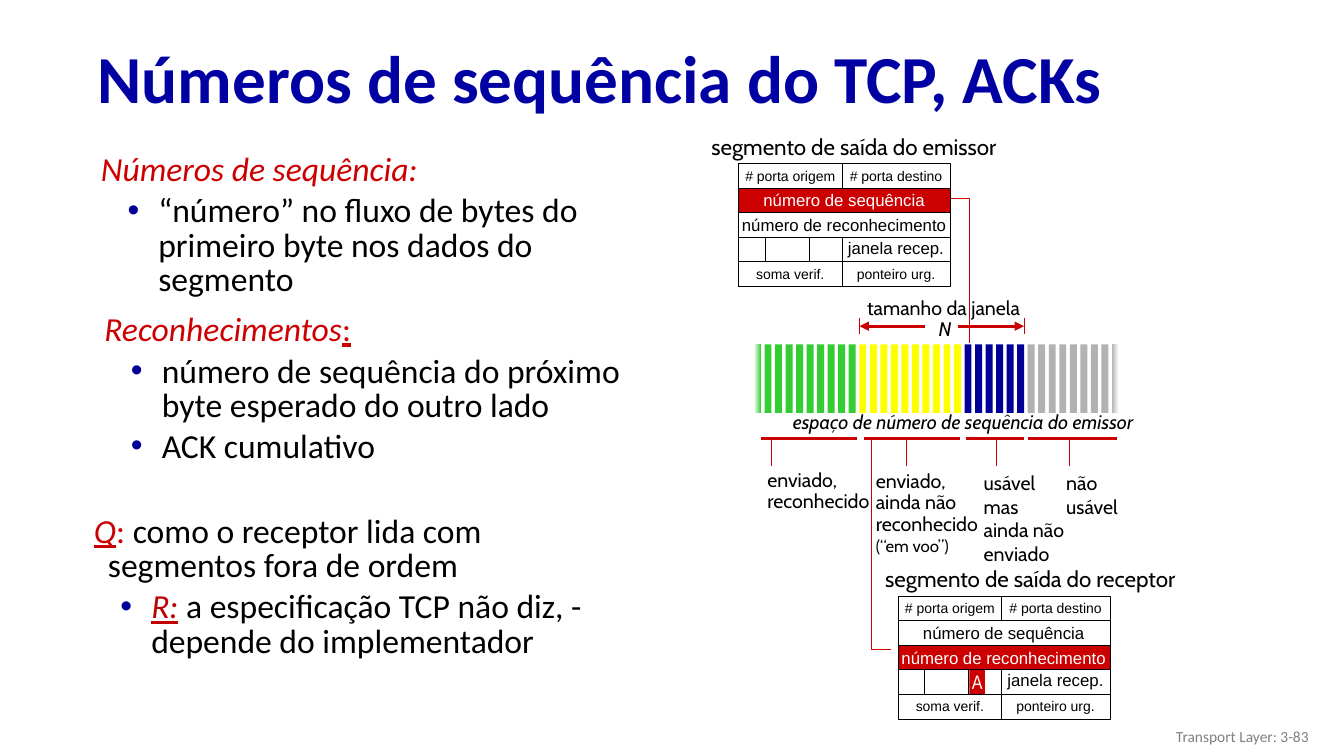
"""Build the slide on TCP sequence numbers and ACKs."""
from lxml.etree import SubElement as Sub
from pptx import Presentation
from pptx.dml.color import RGBColor as RGB
from pptx.enum.shapes import MSO_CONNECTOR as LINK, MSO_SHAPE as FORM
from pptx.enum.text import MSO_ANCHOR as ANCHOR, PP_ALIGN as ALIGN
from pptx.oxml.ns import qn
from pptx.util import Pt

BLACK = RGB(0, 0, 0)
WHITE = RGB(255, 255, 255)
RED = RGB(0xCC, 0, 0)
DARK = RGB(0xC0, 0, 0)
NAVY = RGB(0, 0, 0xA3)
BLUE = RGB(0, 0, 0x99)
GREEN = RGB(0x33, 0xCC, 0x33)
GOLD = RGB(0xFF, 0xFF, 0)
GRAY = RGB(0xB2, 0xB2, 0xB2)
DIM = RGB(0x80, 0x80, 0x80)
LEFT, MID, RIGHT = ALIGN.LEFT, ALIGN.CENTER, ALIGN.RIGHT

deck = Presentation()
deck.slide_width, deck.slide_height = Pt(960), Pt(540)
slide = deck.slides.add_slide(deck.slide_layouts[6])
shapes = slide.shapes


def frame(x, y, w, h, anchor=ANCHOR.TOP):
    area = shapes.add_textbox(Pt(x), Pt(y), Pt(w), Pt(h)).text_frame
    area.word_wrap = True
    area.vertical_anchor = anchor
    return area


def write(para, text, size=14, face="Cabin", hue=BLACK, bold=False, slant=False, under=False):
    run = para.add_run()
    run.text = text
    font = run.font
    font.size, font.name, font.color.rgb = Pt(size), face, hue
    font.bold, font.italic, font.underline = bold, slant, under


rects = []
lines = []
labels = []
bends = [[(679, 141.8), (692.6, 141.8), (692.6, 245)],
         [(636.5, 463.7), (622.8, 463.7), (622.8, 314)]]

WIDE, TALL, ROW, HALF = 151.5, 88, 17.5, 74
for left, top, mark in [(527.5, 117, 1), (641.5, 426, 2)]:
    rects.append((left, top + mark * ROW, WIDE, ROW, RED, None))
    rects.append((left, top, WIDE, TALL, None, BLACK))
    for row in range(1, 5):
        lines.append((left, top + row * ROW, left + WIDE, top + row * ROW, BLACK, 0.75, False))
    for x, start, end in [(HALF, 0, 1), (HALF, 3, TALL / ROW), (19, 3, 4), (50.5, 3, 4)]:
        lines.append((left + x, top + start * ROW, left + x, top + end * ROW, BLACK, 0.75, False))
    for x, y, size, text in [(37, -1, 10, "# porta origem"), (112.5, -1, 10, "# porta destino"),
                             (75.5, 15, 12, "número de sequência"),
                             (75.5, 33, 12, "número de reconhecimento"),
                             (112.5, 49, 12, "janela recep."),
                             (37, 69, 10, "soma verif."), (112.5, 69, 10, "ponteiro urg.")]:
        hue = WHITE if y == (15, 33)[mark - 1] else BLACK
        labels.append((left + x - 90, top + y, 180, MID, 1, text,
                       dict(size=size, face="Arial", hue=hue)))
rects.append((692.5, 478.5, 11, 17.5, RED, None))

hues = [GREEN] * 10 + [GOLD] * 10 + [BLUE] * 6 + [GRAY] * 9
for i, hue in enumerate(hues):
    fill = hue
    if i == 0:
        fill = (WHITE, hue)
    elif i == len(hues) - 1:
        fill = (hue, WHITE)
    rects.append((538.6 + 7.52 * i, 246, 5, 49, fill, None))

for start, end, tick in [(543.5, 612, 551), (617, 685.5, 647.5), (690, 731.5, 712), (734.5, 798, 764)]:
    lines.append((start, 313, end, 313, RED, 2.25, False))
    lines.append((tick, 314.5, tick, 333, RED, 0.75, False))
for start, end in [(684.5, 731.5), (660.5, 614)]:
    lines.append((start, 233, end, 233, RED, 2.25, True))
    lines.append((end, 227.5, end, 238.5, RED, 0.75, False))

labels += [
    (490, 91.5, 240, MID, 1, "segmento de saída do emissor", dict(size=16)),
    (616, 400, 240, MID, 1, "segmento de saída do receptor", dict(size=16)),
    (590, 209.5, 168, MID, 0.9, "tamanho da janela", {}),
    (640, 225, 70, MID, 0.9, "N", dict(slant=True)),
    (538, 289.5, 300, MID, 1, "espaço de número de sequência do emissor", dict(slant=True)),
    (541, 332.5, 100, LEFT, 0.9, "enviado,\nreconhecido", {}),
    (618.5, 333.5, 100, LEFT, 0.9, "enviado,\nainda não\nreconhecido", {}),
    (618.5, 381, 90, LEFT, 0.9, "(“em voo”)", dict(size=12)),
    (695.5, 333, 85, LEFT, 1, "usável\nmas\nainda não\nenviado", {}),
    (754.5, 333, 65, LEFT, 1, "não\nusável", {}),
    (673, 475, 50, MID, 1, "A", dict(face="Arial Narrow", hue=WHITE)),
    (726, 516, 216, RIGHT, 1, "Transport Layer: 3-83", dict(size=11, face="Calibri", hue=DIM)),
]

for x, y, w, h, fill, edge in rects:
    rect = shapes.add_shape(FORM.RECTANGLE, Pt(x), Pt(y), Pt(w), Pt(h))
    rect.shadow.inherit = False
    if fill is None:
        rect.fill.background()
    elif fill in hues or fill == RED:
        rect.fill.solid()
        rect.fill.fore_color.rgb = fill
    else:
        rect.fill.gradient()
        rect.fill.gradient_angle = 0
        for stop, hue in zip(rect.fill.gradient_stops, fill):
            stop.color.rgb = hue
    if edge is None:
        rect.line.fill.background()
    else:
        rect.line.color.rgb, rect.line.width = edge, Pt(0.75)

for x, y, right, base, hue, width, head in lines:
    link = shapes.add_connector(LINK.STRAIGHT, Pt(x), Pt(y), Pt(right), Pt(base))
    link.line.color.rgb, link.line.width = hue, Pt(width)
    if head:
        Sub(link.line._get_or_add_ln(), qn("a:tailEnd"), type="triangle")
    Sub(link._element.spPr, qn("a:effectLst"))

for bend in bends:
    spots = [(Pt(x), Pt(y)) for x, y in bend]
    pen = shapes.build_freeform(*spots[0])
    pen.add_line_segments(spots[1:], close=False)
    wire = pen.convert_to_shape()
    wire.shadow.inherit = False
    wire.fill.background()
    wire.line.color.rgb, wire.line.width = RED, Pt(0.75)

for x, y, w, align, space, text, look in labels:
    parts = text.split("\n")
    area = frame(x, y, w, 8 + 17 * len(parts))
    for i, part in enumerate(parts):
        para = area.add_paragraph() if i else area.paragraphs[0]
        para.alignment, para.line_spacing = align, space
        write(para, part, **look)

title = frame(62.5, 23, 897, 70.5, ANCHOR.MIDDLE).paragraphs[0]
title.line_spacing = 0.9
write(title, "Números de sequência do TCP, ACKs", size=48, face="Calibri", hue=NAVY, bold=True)

head = dict(hue=RED, slant=True)
notes = [
    (56, 106.5, 103, [
        [("Números de sequência:", head)],
        [("“número” no fluxo de bytes do primeiro byte nos dados do segmento", {})]]),
    (58.5, 221, 139, [
        [("Reconhecimentos", head), (":", dict(hue=RED, under=True))],
        [("número de sequência do próximo byte esperado do outro lado", {})],
        [("ACK cumulativo", {})]]),
    (51, 365, 136, [
        [("Q", dict(hue=RED, slant=True, under=True)), (":", dict(hue=RED)),
         (" como o receptor lida com segmentos fora de ordem", {})],
        [("R:", dict(hue=DARK, slant=True, under=True)),
         (" a especificação TCP não diz, - depende do implementador", {})]]),
]
for x, y, h, paras in notes:
    area = frame(x, y, 401, h)
    for i, runs in enumerate(paras):
        para = area.add_paragraph() if i else area.paragraphs[0]
        para.line_spacing, para.space_before = 0.85, Pt(5 if i else 0)
        props = para._p.get_or_add_pPr()
        props.set("marL", str(Pt(50 if i else 19)))
        props.set("indent", str(Pt(-22 if i else -10)))
        if i:
            tint = Sub(props, qn("a:buClr"))
            Sub(tint, qn("a:srgbClr"), val=str(BLUE))
            Sub(props, qn("a:buFont"), typeface="Arial")
            Sub(props, qn("a:buChar"), char="•")
        for text, look in runs:
            write(para, text, size=24, face="Calibri", **look)

deck.save("out.pptx")
